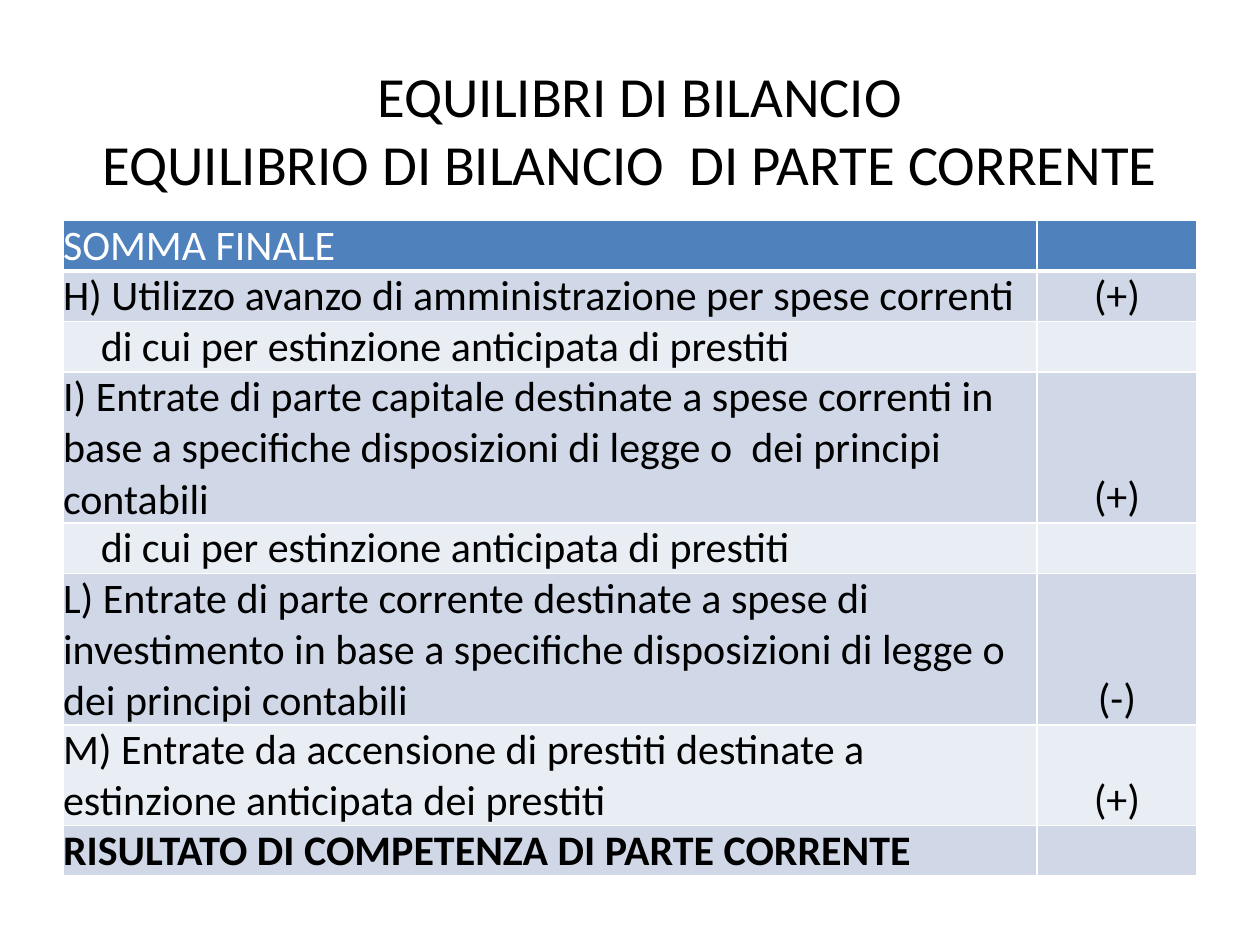
from lxml import etree
from pptx import Presentation
from pptx.dml.color import RGBColor
from pptx.enum.text import MSO_ANCHOR, PP_ALIGN
from pptx.oxml.ns import qn
from pptx.util import Inches, Pt

LEFT, CENTER = PP_ALIGN.LEFT, PP_ALIGN.CENTER
MIDDLE, BOTTOM = MSO_ANCHOR.MIDDLE, MSO_ANCHOR.BOTTOM
LINE = 0.4
SUB = "di cui per estinzione anticipata di prestiti"
TITLE = [("EQUILIBRI DI BILANCIO", 0.16),
         ("EQUILIBRIO DI BILANCIO  DI PARTE CORRENTE", 0)]
ROWS = [
    ("SOMMA FINALE", "", 1),
    ("H) Utilizzo avanzo di amministrazione per spese correnti", "(+)", 1),
    (SUB, "", 1),
    ("I) Entrate di parte capitale destinate a spese correnti in base a "
     "specifiche disposizioni di legge o  dei principi contabili", "(+)", 3),
    (SUB, "", 1),
    ("L) Entrate di parte corrente destinate a spese di investimento in base a "
     "specifiche disposizioni di legge o dei principi contabili", "(-)", 3),
    ("M) Entrate da accensione di prestiti destinate a estinzione anticipata "
     "dei prestiti", "(+)", 2),
    ("RISULTATO DI COMPETENZA DI PARTE CORRENTE", "", 1),
]


def color(code):
    return RGBColor.from_string(code)


class Deck:
    """Holds the style and the current slide."""

    def __init__(self, slide):
        self.slide = slide
        self.face = "Calibri"
        self.ink, self.white = "000000", "FFFFFF"
        self.head, self.bands = "4F81BD", ("E9EDF4", "D0D8E8")

    def style(self, para, size, code, align, bold=False):
        para.alignment = align
        font = para.font
        font.name, font.size, font.bold = self.face, Pt(size), bold
        font.color.rgb = color(code)

    def title(self, lines, x, y, w, h):
        frame = self.slide.shapes.add_textbox(
            Inches(x), Inches(y), Inches(w), Inches(h)).text_frame
        frame.word_wrap = True
        frame.vertical_anchor = MIDDLE
        for i, (text, indent) in enumerate(lines):
            para = frame.add_paragraph() if i else frame.paragraphs[0]
            para.text = text
            self.style(para, 32.4, self.ink, CENTER)
            para._p.get_or_add_pPr().set("marL", str(Inches(indent)))

    def border(self, cell, widths):
        props = cell._tc.get_or_add_tcPr()
        for i, (side, width) in enumerate(zip("LRTB", widths)):
            line = etree.Element(qn(f"a:ln{side}"), w=str(Pt(width)))
            fill = etree.SubElement(line, qn("a:solidFill"))
            etree.SubElement(fill, qn("a:srgbClr"), val=self.white)
            props.insert(i, line)

    def cell(self, cell, text, row, align, bold):
        top = row == 0
        cell.text = text
        cell.vertical_anchor = BOTTOM
        cell.margin_left = Inches(0.3 if text == SUB else 0)
        cell.margin_right = cell.margin_top = cell.margin_bottom = 0
        cell.fill.solid()
        cell.fill.fore_color.rgb = color(self.head if top else self.bands[row % 2])
        self.border(cell, (1, 1, 3 if row == 1 else 1, 3 if top else 1))
        self.style(cell.text_frame.paragraphs[0], 24,
                   self.white if top else self.ink, align, bold)

    def table(self, rows, x, y, widths):
        height = LINE * sum(row[2] for row in rows)
        grid = self.slide.shapes.add_table(
            len(rows), len(widths), Inches(x), Inches(y),
            Inches(sum(widths)), Inches(height)).table
        for col, width in zip(grid.columns, widths):
            col.width = Inches(width)
        for i, (label, sign, count) in enumerate(rows):
            grid.rows[i].height = Inches(LINE * count)
            bold = i == len(rows) - 1
            self.cell(grid.cell(i, 0), label, i, LEFT, bold)
            self.cell(grid.cell(i, 1), sign, i, CENTER, bold)


def main():
    show = Presentation()
    show.slide_width, show.slide_height = Inches(10), Inches(7.5)
    deck = Deck(show.slides.add_slide(show.slide_layouts[6]))
    deck.title(TITLE, 0.5, 0.46, 9, 1.12)
    deck.table(ROWS, 0.5, 1.75, (7.73, 1.27))
    show.save("out.pptx")


if __name__ == "__main__":
    main()
